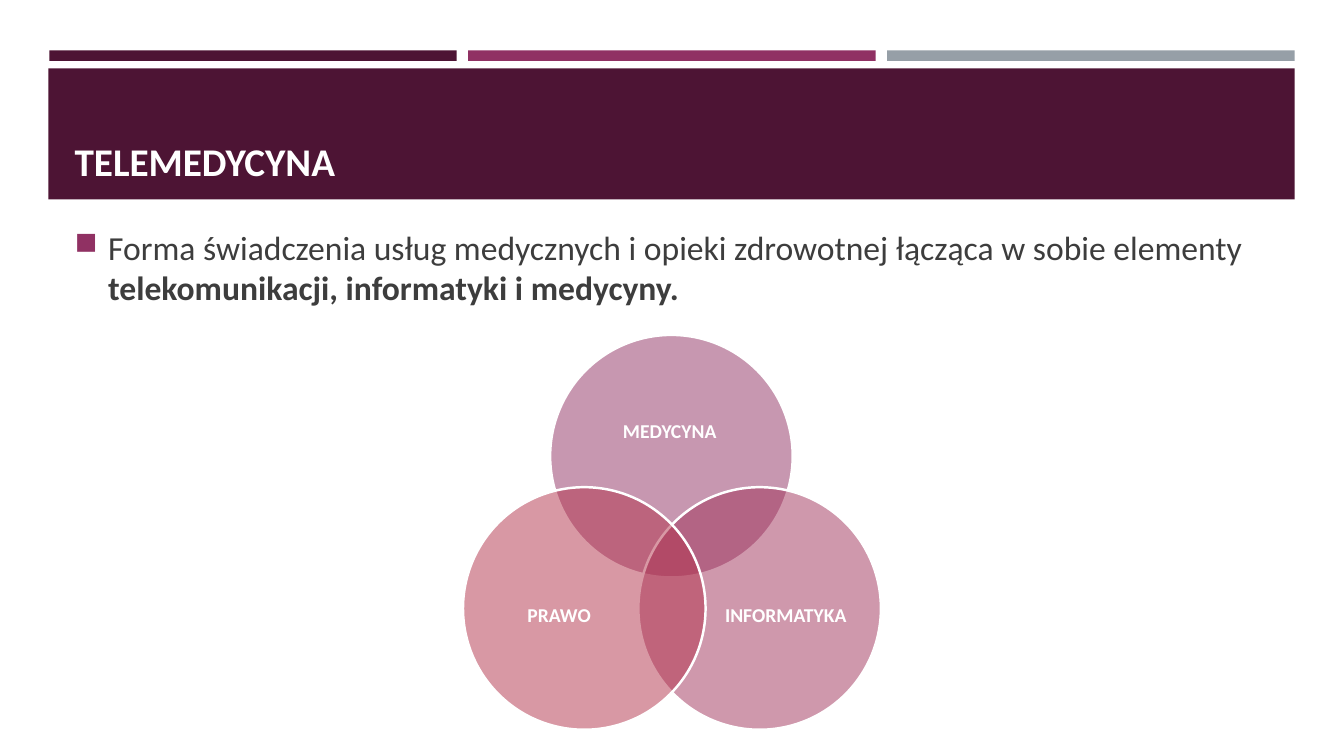
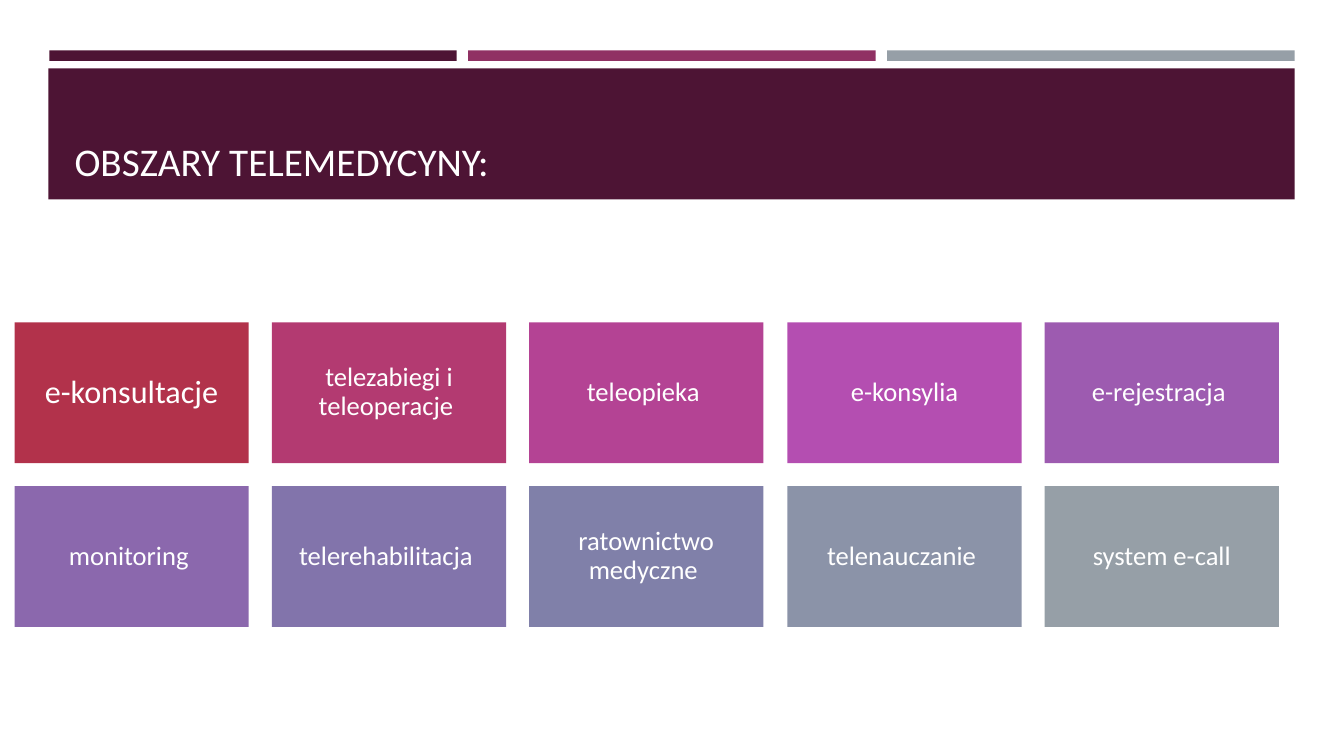
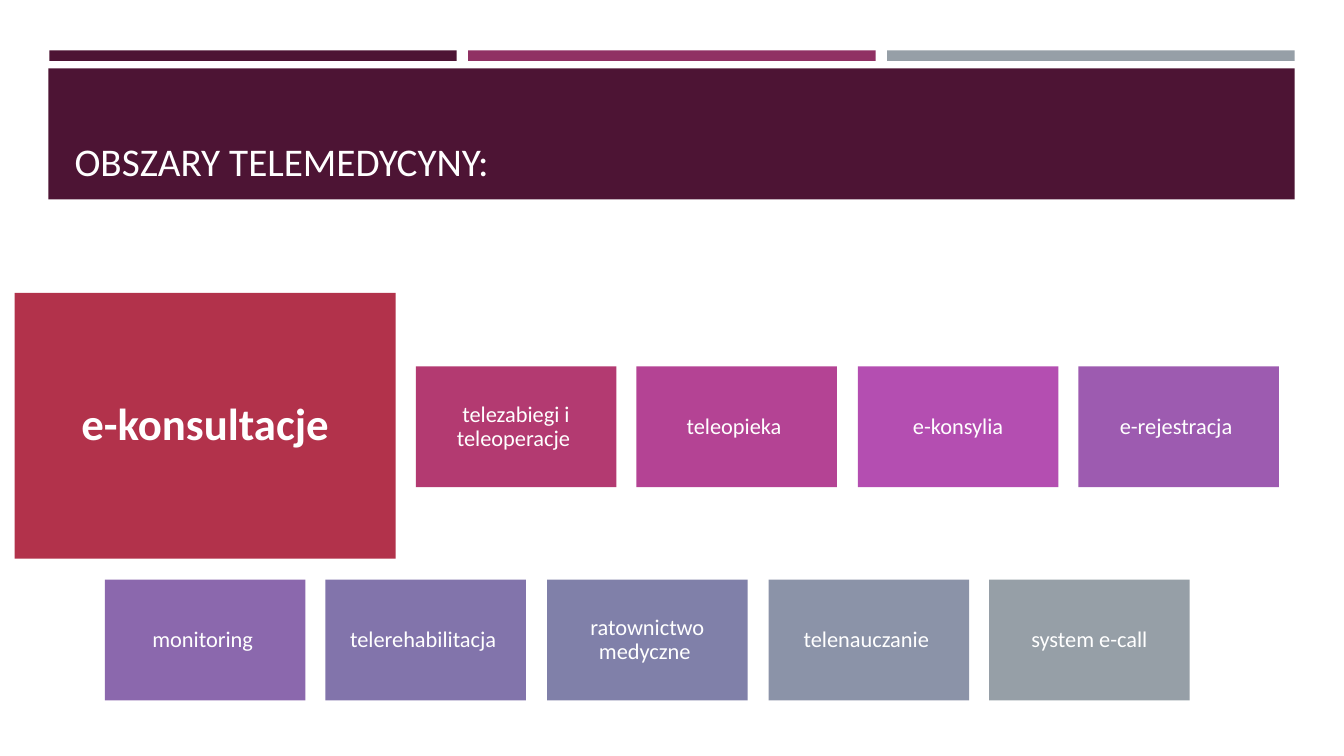
"""Builds a three-slide deck about telemedicine and its areas."""
from dataclasses import dataclass
from typing import Any

from lxml.etree import SubElement
from pptx import Presentation
from pptx.dml.color import RGBColor as Rgb
from pptx.enum.shapes import MSO_SHAPE as Preset
from pptx.enum.text import MSO_ANCHOR as Anchor, PP_ALIGN as Align
from pptx.oxml.ns import qn
from pptx.util import Pt

EMU_PER_PX = 9525
FONT = "Calibri"
COLOURS = {
    "white": "FFFFFF",
    "text": "3D3D3D",
    "plum": "4D1434",
    "berry": "903163",
    "grey": "969FA7",
    "wine": "A1325A",
    "red": "B2324B",
    "raspberry": "B33A71",
    "magenta": "B44394",
    "orchid": "B44EB1",
    "violet": "9D5BB0",
    "lavender": "8B68AD",
    "iris": "8274AB",
    "slate": "8080A9",
    "steel": "8B93A8",
}


@dataclass(frozen=True)
class Box:
    left: int
    top: int
    width: int
    height: int

    def emu(self) -> list[int]:
        return [px(side) for side in (self.left, self.top, self.width, self.height)]


@dataclass(frozen=True)
class Style:
    size: int
    bold: bool = False
    colour: str = "white"
    align: Align = Align.CENTER
    anchor: Anchor = Anchor.MIDDLE
    line_spacing: float = 0.9
    inset_x: int = 0
    inset_y: int = 0


@dataclass(frozen=True)
class Span:
    text: str
    bold: bool = False


@dataclass(frozen=True)
class Circle:
    label: str
    colour: str
    left: int
    top: int
    label_box: Box


@dataclass(frozen=True)
class Area:
    label: str
    colour: str


HEADER = Box(46, 65, 1187, 125)
TITLE_BOX = Box(61, 74, 1158, 107)
BODY_BOX = Box(61, 216, 1158, 80)
BULLET_INDENT = 32
DIAMETER = 231
CIRCLE_LABEL = Style(14, bold=True)
BODY = Style(24, colour="text", align=Align.LEFT, anchor=Anchor.TOP, line_spacing=1.0, inset_x=10)
DEFINITION = [
    Span("Forma świadczenia usług medycznych i opieki zdrowotnej łącząca w sobie elementy "),
    Span("telekomunikacji, informatyki i medycyny.", bold=True),
]
CIRCLES = [
    Circle("MEDYCYNA ", "berry", 524, 319, Box(555, 359, 170, 105)),
    Circle("INFORMATYKA", "wine", 608, 464, Box(679, 523, 139, 128)),
    Circle("PRAWO", "red", 441, 464, Box(463, 523, 139, 128)),
]
AREAS = [
    Area("e-konsultacje", "red"),
    Area("telezabiegi i teleoperacje ", "raspberry"),
    Area("teleopieka ", "magenta"),
    Area("e-konsylia", "orchid"),
    Area("e-rejestracja ", "violet"),
    Area("monitoring ", "lavender"),
    Area("telerehabilitacja ", "iris"),
    Area("ratownictwo medyczne ", "slate"),
    Area("telenauczanie ", "steel"),
    Area("system e-call", "grey"),
]


def px(length: int) -> int:
    return length * EMU_PER_PX


def rgb(name: str) -> Rgb:
    return Rgb.from_string(COLOURS[name])


def assign(target: Any, values: dict[str, Any]) -> None:
    for name, value in values.items():
        setattr(target, name, value)


def write(shape: Any, spans: list[Span], style: Style) -> Any:
    frame = shape.text_frame
    assign(frame, {
        "word_wrap": True,
        "vertical_anchor": style.anchor,
        "margin_left": px(style.inset_x),
        "margin_right": px(style.inset_x),
        "margin_top": px(style.inset_y),
        "margin_bottom": px(style.inset_y),
    })
    para = frame.paragraphs[0]
    assign(para, {"alignment": style.align, "line_spacing": style.line_spacing})
    for span in spans:
        run = para.add_run()
        run.text = span.text
        assign(run.font, {"name": FONT, "size": Pt(style.size), "bold": style.bold or span.bold})
        run.font.color.rgb = rgb(style.colour)
    return para


def add_text(page: Any, box: Box, spans: list[Span], style: Style) -> Any:
    return write(page.shapes.add_textbox(*box.emu()), spans, style)


def add_filled(page: Any, preset: Preset, box: Box, colour: str) -> Any:
    shape = page.shapes.add_shape(preset, *box.emu())
    shape.shadow.inherit = False
    shape.fill.solid()
    shape.fill.fore_color.rgb = rgb(colour)
    shape.line.fill.background()
    return shape


def add_bullet(para: Any, colour: str) -> None:
    properties = para._p.get_or_add_pPr()
    properties.set("marL", str(px(BULLET_INDENT)))
    properties.set("indent", str(-px(BULLET_INDENT)))
    tint = SubElement(properties, qn("a:buClr"))
    SubElement(tint, qn("a:srgbClr"), val=COLOURS[colour])
    SubElement(properties, qn("a:buSzPct"), val="92000")
    SubElement(properties, qn("a:buChar"), char="■")


def add_page(deck: Any, title: str, bold: bool = False) -> Any:
    page = deck.slides.add_slide(deck.slide_layouts[6])
    for index, colour in enumerate(("plum", "berry", "grey")):
        add_filled(page, Preset.RECTANGLE, Box(47 + 399 * index, 48, 388, 10), colour)
    add_filled(page, Preset.RECTANGLE, HEADER, "plum")
    style = Style(28, bold, align=Align.LEFT, anchor=Anchor.BOTTOM,
                  line_spacing=1.0, inset_x=10, inset_y=5)
    add_text(page, TITLE_BOX, [Span(title)], style)
    return page


def add_circle(page: Any, circle: Circle) -> None:
    box = Box(circle.left, circle.top, DIAMETER, DIAMETER)
    shape = add_filled(page, Preset.OVAL, box, circle.colour)
    tint = shape.fill._xPr.find(qn("a:solidFill"))[0]
    SubElement(tint, qn("a:alpha"), val="50000")
    shape.line.color.rgb = rgb("white")
    shape.line.width = Pt(1.75)
    add_text(page, circle.label_box, [Span(circle.label)], CIRCLE_LABEL)


def add_tile(page: Any, area: Area, box: Box, style: Style) -> None:
    write(add_filled(page, Preset.RECTANGLE, box, area.colour), [Span(area.label)], style)


def add_row(page: Any, areas: list[Area], first: Box, right: int, style: Style) -> None:
    pitch = (right - first.width - first.left) / (len(areas) - 1)
    for index, area in enumerate(areas):
        left = round(first.left + pitch * index)
        add_tile(page, area, Box(left, first.top, first.width, first.height), style)


def build_definition(deck: Any) -> None:
    page = add_page(deck, "TELEMEDYCYNA", bold=True)
    add_bullet(add_text(page, BODY_BOX, DEFINITION, BODY), "berry")
    for circle in CIRCLES:
        add_circle(page, circle)


def build_overview(deck: Any) -> None:
    page = add_page(deck, "OBSZARY TELEMEDYCYNY:")
    style = Style(19, inset_x=8, inset_y=8)
    add_tile(page, AREAS[0], Box(14, 307, 223, 134), Style(23, inset_x=10, inset_y=10))
    add_row(page, AREAS[1:5], Box(259, 307, 223, 134), 1218, style)
    add_row(page, AREAS[5:], Box(14, 463, 223, 134), 1218, style)


def build_focus(deck: Any) -> None:
    page = add_page(deck, "OBSZARY TELEMEDYCYNY:")
    style = Style(16, inset_x=7, inset_y=7)
    add_tile(page, AREAS[0], Box(14, 279, 363, 253), Style(32, bold=True, inset_x=12, inset_y=12))
    add_row(page, AREAS[1:5], Box(396, 349, 191, 115), 1218, style)
    add_row(page, AREAS[5:], Box(100, 552, 191, 115), 1133, style)


def main() -> None:
    deck = Presentation()
    assign(deck, {"slide_width": px(1280), "slide_height": px(720)})
    for build in (build_definition, build_overview, build_focus):
        build(deck)
    deck.save("out.pptx")


if __name__ == "__main__":
    main()
